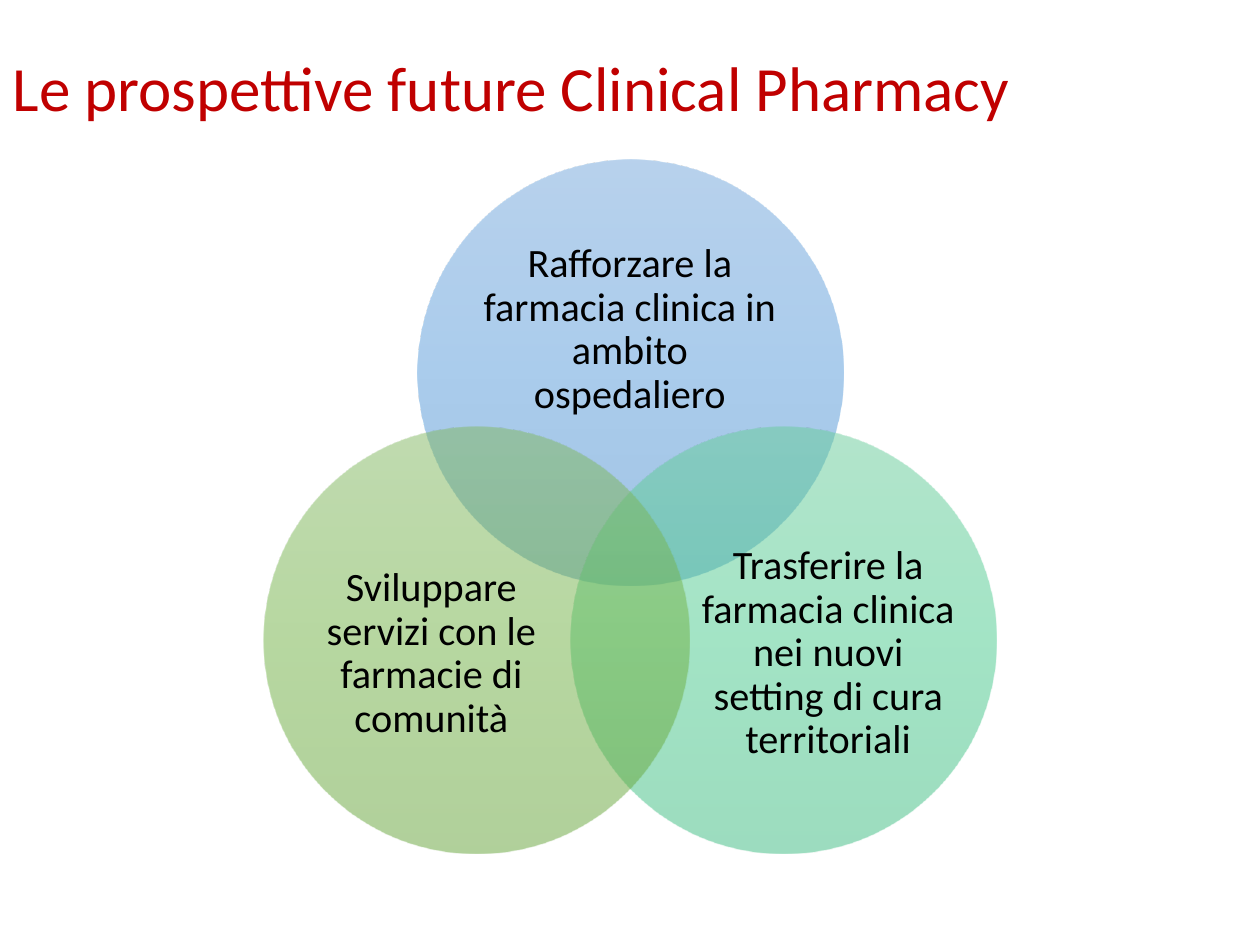
"""Builds a slide with three overlapping circles on the future of clinical pharmacy."""
from dataclasses import dataclass

import lxml.etree
import pptx
import pptx.dml.color
import pptx.enum.shapes
import pptx.enum.text
import pptx.oxml.ns
import pptx.util
from pptx.util import Inches


@dataclass(frozen=True)
class Theme:
    font: str = "Calibri"
    title_size: int = 36
    label_size: int = 23
    title: str = "C00000"
    text: str = "000000"
    blue: tuple = ("71A6DB", "559BDB", "448ACA")
    teal: tuple = ("67CC9A", "47CB8E", "39BB7F")
    green: tuple = ("81B861", "6FB242", "62A336")
    opacity: int = 50


THEME = Theme()
DIAMETER = 3.38
CIRCLES = (
    (3.31, 1.27, THEME.blue, (3.76, 1.86, 2.48, 1.52),
     "Rafforzare la farmacia clinica in ambito ospedaliero"),
    (4.53, 3.39, THEME.teal, (5.56, 4.26, 2.03, 1.86),
     "Trasferire la farmacia clinica nei nuovi setting di cura territoriali"),
    (2.09, 3.39, THEME.green, (2.41, 4.26, 2.03, 1.86),
     "Sviluppare servizi con le farmacie di comunità"),
)


def write_text(tf, text, size, color, align):
    tf.word_wrap = True
    tf.auto_size = pptx.enum.text.MSO_AUTO_SIZE.NONE
    tf.vertical_anchor = pptx.enum.text.MSO_ANCHOR.MIDDLE
    tf.text = text
    p = tf.paragraphs[0]
    p.alignment = align
    p.line_spacing = 0.9
    p.space_before = pptx.util.Pt(0)
    p.font.name = THEME.font
    p.font.size = pptx.util.Pt(size)
    p.font.color.rgb = pptx.dml.color.RGBColor.from_string(color)


def set_title(slide, text):
    title = slide.shapes.title
    title.left, title.top = Inches(0), Inches(0)
    title.width, title.height = Inches(8.62), Inches(1.45)
    write_text(title.text_frame, text, THEME.title_size, THEME.title,
               pptx.enum.text.PP_ALIGN.LEFT)


def fill_gradient(sp, colors):
    qn = pptx.oxml.ns.qn
    sp.fill.gradient()
    sp.fill.gradient_angle = 270
    stops = sp._element.spPr.find(qn("a:gradFill")).find(qn("a:gsLst"))
    for stop in list(stops):
        stops.remove(stop)
    for i, color in enumerate(colors):
        position = 100000 * i // (len(colors) - 1)
        stop = lxml.etree.SubElement(stops, qn("a:gs"), pos=str(position))
        rgb = lxml.etree.SubElement(stop, qn("a:srgbClr"), val=color)
        lxml.etree.SubElement(rgb, qn("a:alpha"), val=str(THEME.opacity * 1000))


def add_circle(slide, left, top, colors):
    sp = slide.shapes.add_shape(
        pptx.enum.shapes.MSO_SHAPE.OVAL, Inches(left), Inches(top),
        Inches(DIAMETER), Inches(DIAMETER))
    sp.shadow.inherit = False
    sp.line.fill.background()
    fill_gradient(sp, colors)


def add_label(slide, box, text):
    tf = slide.shapes.add_textbox(*map(Inches, box)).text_frame
    tf.margin_left = tf.margin_right = tf.margin_top = tf.margin_bottom = 0
    write_text(tf, text, THEME.label_size, THEME.text,
               pptx.enum.text.PP_ALIGN.CENTER)
    tf.paragraphs[0].space_after = pptx.util.Pt(8)


def main():
    prs = pptx.Presentation()
    prs.slide_width, prs.slide_height = Inches(10), Inches(7.5)
    slide = prs.slides.add_slide(prs.slide_layouts.get_by_name("Title Only"))
    set_title(slide, "Le prospettive future Clinical Pharmacy")
    for left, top, colors, box, text in CIRCLES:
        add_circle(slide, left, top, colors)
        add_label(slide, box, text)
    prs.save("out.pptx")


if __name__ == "__main__":
    main()
